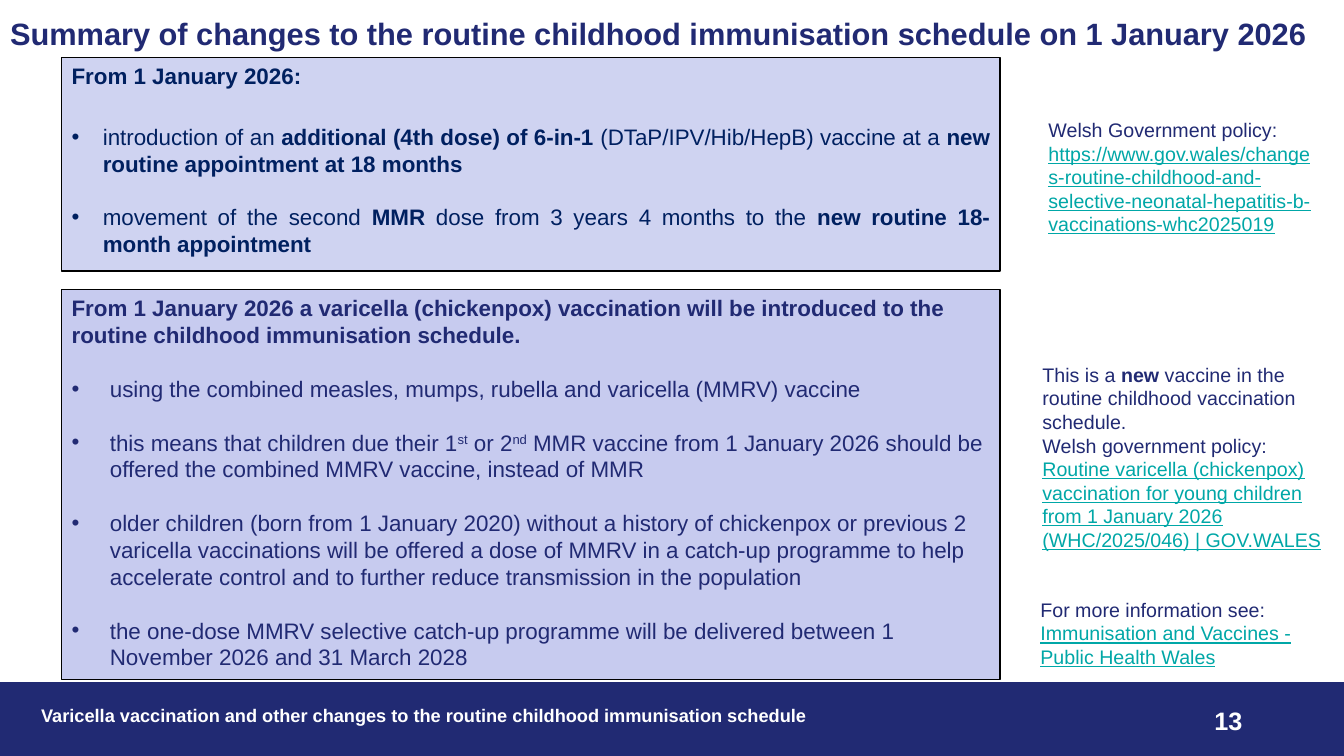
from pptx import Presentation
from pptx.dml.color import RGBColor
from pptx.enum.shapes import MSO_SHAPE
from pptx.enum.text import MSO_ANCHOR, MSO_AUTO_SIZE, PP_ALIGN
from pptx.oxml.ns import qn
from pptx.util import Inches, Pt
from lxml.etree import SubElement

COLORS = {
    "navy": "212A73",
    "dark": "002060",
    "teal": "00A7A7",
    "white": "FFFFFF",
    "black": "000000",
    "pale": "CFD3F1",
    "lilac": "C7CBEF",
}
BOLD = {"bold": True}
SUPER = {"baseline": 30000}
LINK = {"color": "teal", "underline": True}


def rgb(name):
    return RGBColor.from_string(COLORS[name])


def add_run(p, text, size=16, color="navy", bold=False, underline=False, baseline=0):
    r = p.add_run()
    r.text = text
    r.font.name = "Arial"
    r.font.size = Pt(size)
    r.font.bold = bold
    r.font.underline = underline
    r.font.color.rgb = rgb(color)
    if baseline:
        r._r.get_or_add_rPr().set("baseline", str(baseline))


def add_runs(p, runs, **base):
    for text, extra in runs:
        add_run(p, text, **{**base, **extra})


def set_bullet(p, indent):
    pPr = p._p.get_or_add_pPr()
    pPr.set("marL", str(Inches(indent)))
    pPr.set("indent", str(-Inches(indent)))
    if indent:
        SubElement(pPr, qn("a:buFont")).set("typeface", "Arial")
        SubElement(pPr, qn("a:buChar")).set("char", "•")
    else:
        SubElement(pPr, qn("a:buNone"))


def place(sp, left, top, width, height):
    sp.left, sp.top = Inches(left), Inches(top)
    sp.width, sp.height = Inches(width), Inches(height)
    tf = sp.text_frame
    tf.word_wrap = True
    tf.auto_size = MSO_AUTO_SIZE.NONE
    tf.vertical_anchor = MSO_ANCHOR.TOP
    return tf


def add_panel(sp, top, height, fill, heading, bullets, indent, gaps, align, color):
    tf = place(sp, 0.61, top, 9.31, height)
    sp.fill.solid()
    sp.fill.fore_color.rgb = rgb(fill)
    sp.line.color.rgb = rgb("black")
    sp.line.width = Pt(1)
    p = tf.paragraphs[0]
    set_bullet(p, 0)
    p.alignment = align
    p.space_before = Pt(0)
    add_run(p, heading, color=color, bold=True)
    for runs, gap in zip(bullets, gaps):
        p = tf.add_paragraph()
        set_bullet(p, indent)
        p.alignment = align
        p.space_before = Pt(gap)
        add_runs(p, runs, color=color)


def add_text(s, left, top, width, height, paragraphs, align=PP_ALIGN.LEFT, **base):
    sp = s.shapes.add_textbox(0, 0, 0, 0)
    tf = place(sp, left, top, width, height)
    for i, runs in enumerate(paragraphs):
        p = tf.add_paragraph() if i else tf.paragraphs[0]
        p.alignment = align
        add_runs(p, runs, **base)


def add_band(s):
    sp = s.shapes.add_shape(MSO_SHAPE.RECTANGLE, 0, Inches(6.77), Inches(13.33), Inches(0.73))
    sp.shadow.inherit = False
    sp.fill.solid()
    sp.fill.fore_color.rgb = rgb("navy")
    sp.line.color.rgb = rgb("navy")
    sp.line.width = Pt(1)


def add_title(s, text):
    p = place(s.shapes.title, 0, 0.1, 13.33, 0.47).paragraphs[0]
    p.alignment = PP_ALIGN.LEFT
    add_run(p, text, size=22, bold=True)


def main():
    prs = Presentation()
    prs.slide_width, prs.slide_height = Inches(13.33), Inches(7.5)
    s = prs.slides.add_slide(prs.slide_layouts[3])
    add_band(s)
    add_title(s, "Summary of changes to the routine childhood immunisation schedule on 1 January 2026")

    add_panel(
        s.placeholders[1], 0.57, 2.12, "pale", "From 1 January 2026:",
        [
            [("introduction of an ", {}),
             ("additional (4th dose) of 6-in-1 ", BOLD),
             ("(DTaP/IPV/Hib/HepB) vaccine at a ", {}),
             ("new routine appointment at 18 months", BOLD)],
            [("movement of the second ", {}),
             ("MMR", BOLD),
             (" dose from 3 years 4 months to the ", {}),
             ("new routine 18-month appointment", BOLD)],
        ],
        indent=0.31, gaps=[24, 19.2], align=PP_ALIGN.JUSTIFY, color="dark")

    add_panel(
        s.placeholders[2], 2.87, 3.87, "lilac",
        "From 1 January 2026 a varicella (chickenpox) vaccination will be introduced "
        "to the routine childhood immunisation schedule.",
        [
            [("using the combined measles, mumps, rubella and varicella (MMRV) vaccine", {})],
            [("this means that children due their 1", {}), ("st", SUPER),
             (" or 2", {}), ("nd", SUPER),
             (" MMR vaccine from 1 January 2026 should be offered the combined "
              "MMRV vaccine, instead of MMR", {})],
            [("older children (born from 1 January 2020) without a history of chickenpox "
              "or previous 2 varicella vaccinations will be offered a dose of MMRV in a "
              "catch-up programme to help accelerate control and to further reduce "
              "transmission in the population", {})],
            [("the one-dose MMRV selective catch-up programme will be delivered between "
              "1 November 2026 and 31 March 2028", {})],
        ],
        indent=0.38, gaps=[19.2] * 4, align=PP_ALIGN.LEFT, color="navy")

    add_text(s, 10.3, 1.12, 2.85, 1.51, [
        [("Welsh Government policy: ", {}),
         ("https://www.gov.wales/changes-routine-childhood-and-selective-neonatal-"
          "hepatitis-b-vaccinations-whc2025019", LINK)],
    ], size=14)
    add_text(s, 10.24, 3.55, 3.11, 1.99, [
        [("This is a ", {}), ("new", BOLD),
         (" vaccine in the routine childhood vaccination schedule.", {})],
        [("Welsh government policy: ", {}),
         ("Routine varicella (chickenpox) vaccination for young children from "
          "1 January 2026 (WHC/2025/046) | GOV.WALES", LINK)],
    ], size=14)
    add_text(s, 10.22, 5.88, 2.99, 0.81, [
        [("For more information see: ", {}),
         ("Immunisation and Vaccines - Public Health Wales", LINK)],
    ], size=14)

    add_text(s, 0.31, 6.94, 8.25, 0.4, [
        [("Varicella vaccination and other changes to the routine childhood "
          "immunisation schedule", {})],
    ], size=13, color="white", bold=True)
    add_text(s, 9.42, 6.95, 3, 0.4, [[("13", {})]],
             align=PP_ALIGN.RIGHT, size=18, color="white", bold=True)
    prs.save("out.pptx")


if __name__ == "__main__":
    main()
